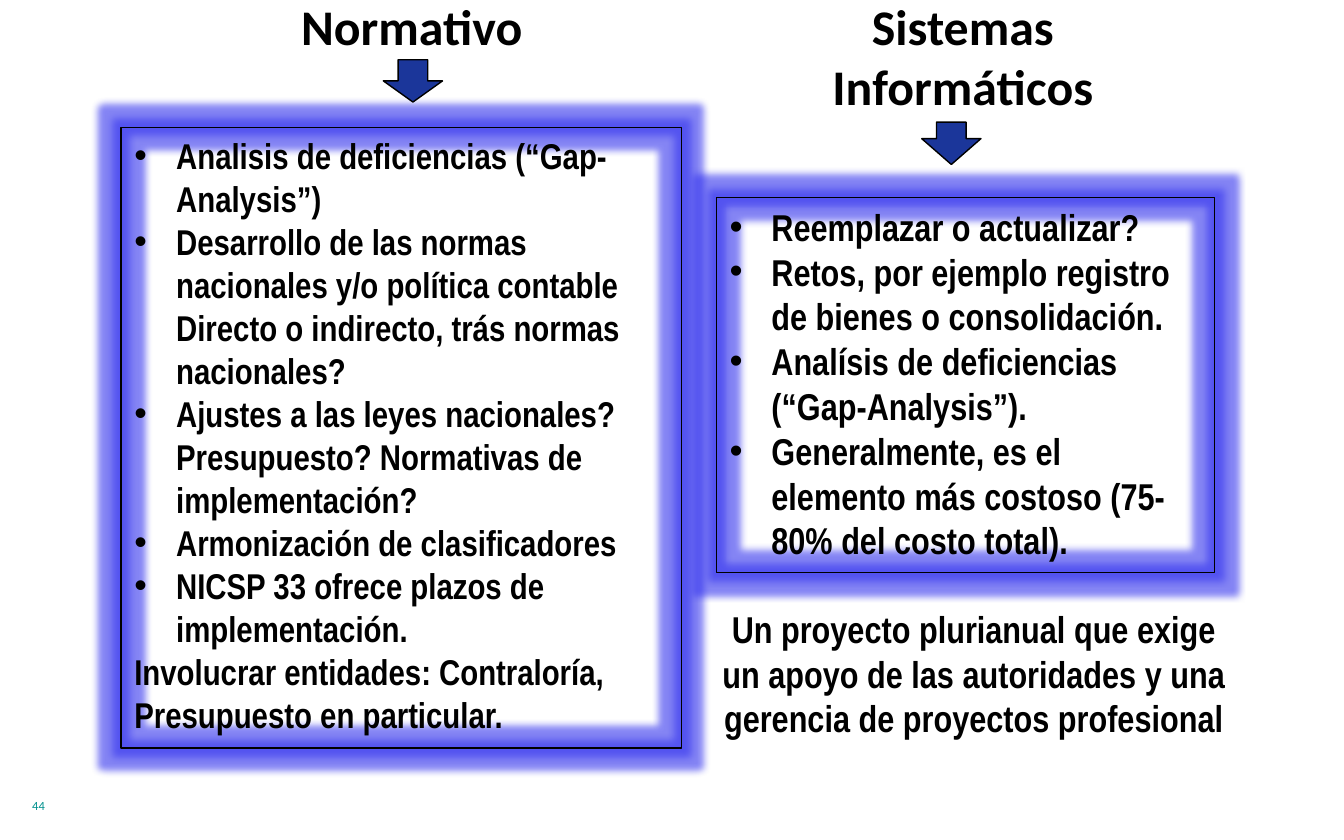
from lxml.etree import SubElement
from pptx import Presentation
from pptx.dml.color import RGBColor
from pptx.enum.shapes import MSO_SHAPE
from pptx.enum.text import MSO_ANCHOR, PP_ALIGN
from pptx.oxml.ns import qn
from pptx.util import Cm, Pt

BLACK = RGBColor(0x00, 0x00, 0x00)
NAVY = RGBColor(0x1B, 0x36, 0x9A)
TEAL = RGBColor(0x00, 0x91, 0x8E)
GLOW = RGBColor(0x33, 0x33, 0xEE)

HEADING_WIDTH = 8.8
ARROW_WIDTH = 1.12
ARROW_HEIGHT = 0.8
HANGING_INDENT = Cm(0.79)

REGULATORY_POINTS = [
    "Analisis de deficiencias (“Gap-Analysis”)",
    "Desarrollo de las normas nacionales y/o política contable Directo o indirecto, "
    "trás normas nacionales?",
    "Ajustes a las leyes nacionales? Presupuesto? Normativas de implementación?",
    "Armonización de clasificadores",
    "NICSP 33 ofrece plazos de implementación.",
]
REGULATORY_CLOSING = "Involucrar entidades: Contraloría, Presupuesto en particular."
SYSTEMS_POINTS = [
    "Reemplazar o actualizar?",
    "Retos, por ejemplo registro de bienes o consolidación.",
    "Analísis de deficiencias (“Gap-Analysis”).",
    "Generalmente, es el elemento más costoso (75-80% del costo total).",
]
CONCLUSION = (
    "Un proyecto plurianual que exige un apoyo de las autoridades "
    "y una gerencia de proyectos profesional"
)


def style_paragraph(paragraph, font_name, size, color=BLACK, bold=True, align=PP_ALIGN.LEFT):
    paragraph.alignment = align
    paragraph.font.name = font_name
    paragraph.font.size = Pt(size)
    paragraph.font.bold = bold
    paragraph.font.color.rgb = color


def add_label(slide, box, text, font_name, size, **style):
    label = slide.shapes.add_textbox(*map(Cm, box))
    label.text_frame.word_wrap = True
    paragraph = label.text_frame.paragraphs[0]
    paragraph.text = text
    style_paragraph(paragraph, font_name, size, **style)


def add_bullet(paragraph):
    properties = paragraph._p.get_or_add_pPr()
    properties.set("marL", str(HANGING_INDENT))
    properties.set("indent", str(-HANGING_INDENT))
    SubElement(properties, qn("a:buFont"), typeface="Arial")
    SubElement(properties, qn("a:buChar"), char="•")


def add_glow(panel):
    effects = SubElement(panel._element.spPr, qn("a:effectLst"))
    glow = SubElement(effects, qn("a:glow"), rad=str(Pt(8)))
    color = SubElement(glow, qn("a:srgbClr"), val=str(GLOW))
    SubElement(color, qn("a:alpha"), val="60000")


def add_panel(slide, box, points, closing, size):
    panel = slide.shapes.add_shape(MSO_SHAPE.RECTANGLE, *map(Cm, box))
    panel.fill.background()
    panel.line.color.rgb = BLACK
    panel.line.width = Pt(0.75)
    add_glow(panel)
    frame = panel.text_frame
    frame.word_wrap = True
    frame.vertical_anchor = MSO_ANCHOR.TOP
    lines = points + ([closing] if closing else [])
    for index, line in enumerate(lines):
        paragraph = frame.add_paragraph() if index else frame.paragraphs[0]
        paragraph.text = line
        if index < len(points):
            add_bullet(paragraph)
        style_paragraph(paragraph, "Arial Narrow", size)


def add_down_arrow(slide, center, top, head):
    arrow = slide.shapes.add_shape(
        MSO_SHAPE.DOWN_ARROW,
        Cm(center - ARROW_WIDTH / 2), Cm(top), Cm(ARROW_WIDTH), Cm(ARROW_HEIGHT),
    )
    arrow.adjustments[1] = head
    arrow.shadow.inherit = False
    arrow.fill.solid()
    arrow.fill.fore_color.rgb = NAVY
    arrow.line.color.rgb = BLACK
    arrow.line.width = Pt(0.75)


def add_topic_column(slide, box, heading, heading_height, heading_shift, arrow_shift,
                     arrow_drop, arrow_head, panel_drop, points, size, closing=None):
    left, top, width, height = box
    center = left + width / 2
    heading_left = center + heading_shift - HEADING_WIDTH / 2
    add_label(slide, (heading_left, top, HEADING_WIDTH, heading_height),
              heading, "Calibri", 26.7, align=PP_ALIGN.CENTER)
    panel_box = (left, top + panel_drop, width, height - panel_drop)
    add_panel(slide, panel_box, points, closing, size)
    add_down_arrow(slide, center + arrow_shift, top + arrow_drop, arrow_head)


def main():
    presentation = Presentation()
    presentation.slide_width = Cm(25.4)
    presentation.slide_height = Cm(15.88)
    slide = presentation.slides.add_slide(presentation.slide_layouts[6])

    add_label(slide, (0.36, 14.96, 5.28, 0.76), "44", "Calibri", 6.7, color=TEAL, bold=False)
    add_topic_column(
        slide, (2.29, -0.2, 10.59, 14.34), "Normativo",
        heading_height=1.5, heading_shift=0.2, arrow_shift=0.22,
        arrow_drop=1.33, arrow_head=0.5, panel_drop=2.61,
        points=REGULATORY_POINTS, size=19.2, closing=REGULATORY_CLOSING,
    )
    add_topic_column(
        slide, (13.54, -0.2, 9.42, 11.02), "Sistemas Informáticos",
        heading_height=2.06, heading_shift=-0.05, arrow_shift=-0.27,
        arrow_drop=2.51, arrow_head=0.61, panel_drop=3.93,
        points=SYSTEMS_POINTS, size=20,
    )
    add_label(slide, (13.31, 11.33, 10.19, 2.82), CONCLUSION, "Arial Narrow", 20,
              align=PP_ALIGN.CENTER)

    presentation.save("out.pptx")


if __name__ == "__main__":
    main()
